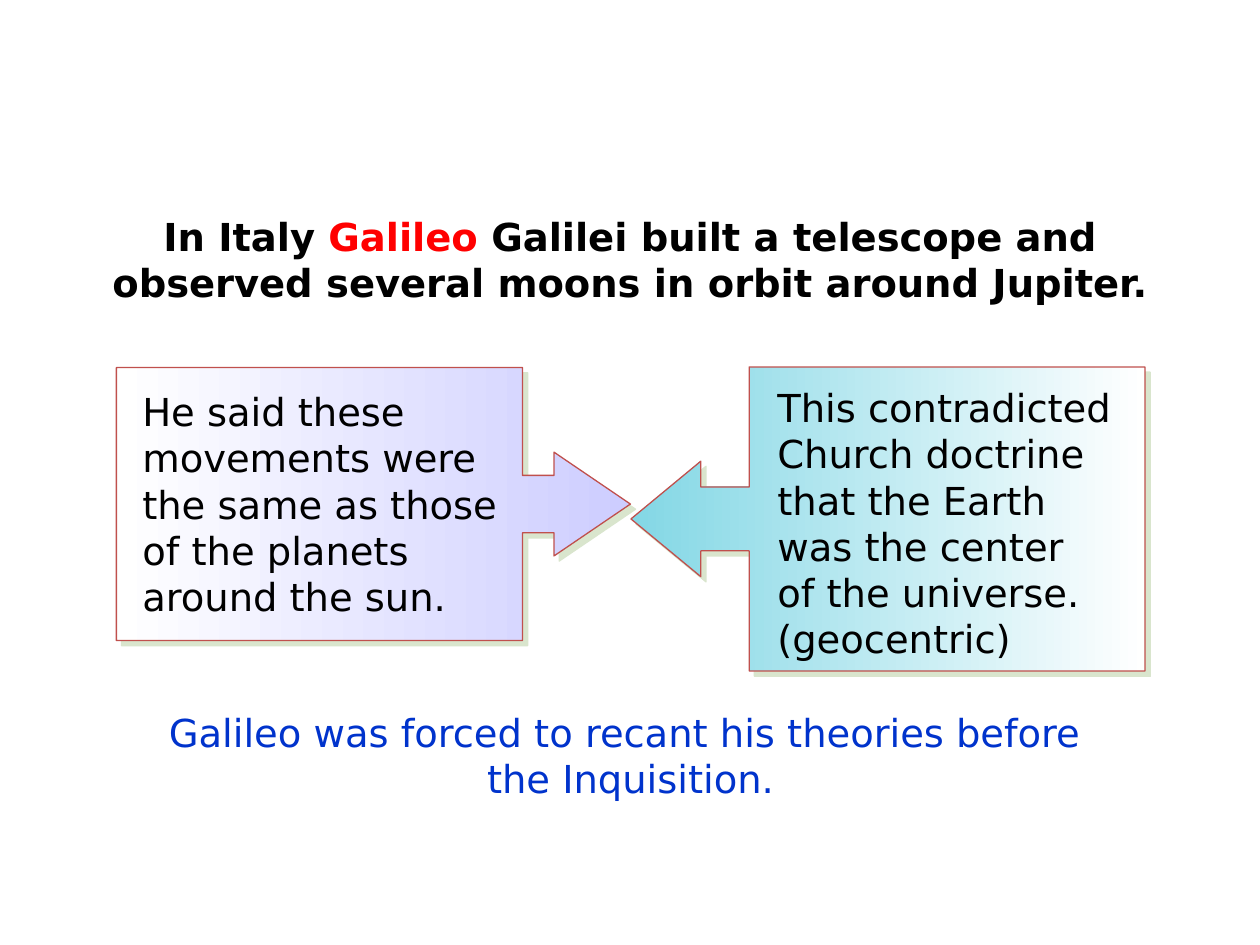
from dataclasses import dataclass

from lxml import etree
from pptx import Presentation
from pptx import util as u
from pptx.dml.color import RGBColor
from pptx.enum import shapes, text
from pptx.oxml.ns import qn

PX = 914400 / 126


@dataclass(frozen=True)
class Theme:
    font: str = "DejaVu Sans"
    size: int = 22
    ink: str = "000000"
    red: str = "FF0000"
    blue: str = "0033CC"
    edge: str = "C0504D"
    shade: str = "ADC793"
    lilac: str = "CDCDFF"
    teal: str = "83D7E5"
    pale: str = "FFFFFF"


@dataclass(frozen=True)
class Box:
    left: int
    top: int
    width: int
    height: int

    def emu(self) -> list[u.Emu]:
        return [px(n) for n in (self.left, self.top, self.width, self.height)]


@dataclass(frozen=True)
class Run:
    text: str
    color: str
    bold: bool = False


@dataclass(frozen=True)
class Arrow:
    box: Box
    turn: int
    color: str
    adjust: tuple[float, ...]
    note: Box
    lines: tuple[str, ...]


THEME = Theme()
ARROWS = (
    Arrow(Box(237, 247, 273, 514), 90, THEME.lilac, (0.21, 0.19, 0.28, 0.79),
          Box(130, 382, 406, 247),
          ("He said these movements were the same as those of the planets "
           "around the sun.",)),
    Arrow(Box(736, 262, 304, 514), 270, THEME.teal, (0.21, 0.19, 0.23, 0.77),
          Box(765, 378, 369, 326),
          ("This contradicted Church doctrine that the Earth was the center ",
           "of the universe. (geocentric)")),
)


def px(n: int) -> u.Emu:
    return u.Emu(round(n * PX))


def write(shape, lines: list[list[Run]], align) -> None:
    frame = shape.text_frame
    frame.word_wrap = True
    frame.auto_size = text.MSO_AUTO_SIZE.SHAPE_TO_FIT_TEXT
    frame.vertical_anchor = text.MSO_ANCHOR.TOP
    para = frame.paragraphs[0]
    para.alignment = align
    for row, line in enumerate(lines):
        if row:
            para.add_line_break()
        for item in line:
            run = para.add_run()
            run.text = item.text
            run.font.name = THEME.font
            run.font.size = u.Pt(THEME.size)
            run.font.bold = item.bold
            run.font.color.rgb = RGBColor.from_string(item.color)


def add_note(host, box: Box, lines: tuple[str, ...], color: str, align) -> None:
    note = host.add_textbox(*box.emu())
    write(note, [[Run(line, color)] for line in lines], align)


def add_shade(shape) -> None:
    shape.shadow.inherit = False
    effects = shape._element.spPr.find(qn("a:effectLst"))
    outer = etree.SubElement(effects, qn("a:outerShdw"), blurRad="0",
                             dist=str(u.Pt(4.2)), dir="2700000",
                             algn="ctr", rotWithShape="0")
    color = etree.SubElement(outer, qn("a:srgbClr"), val=THEME.shade)
    etree.SubElement(color, qn("a:alpha"), val="46000")


def add_arrow(host, arrow: Arrow) -> None:
    kind = shapes.MSO_SHAPE.UP_ARROW_CALLOUT
    shape = host.add_shape(kind, *arrow.box.emu())
    for i, value in enumerate(arrow.adjust):
        shape.adjustments[i] = value
    shape.rotation = arrow.turn
    shape._element.spPr.xfrm.set("flipH", "1")
    shape.fill.gradient()
    shape.fill.gradient_angle = 270
    for stop, color in zip(shape.fill.gradient_stops, (arrow.color, THEME.pale)):
        stop.color.rgb = RGBColor.from_string(color)
    shape.line.color.rgb = RGBColor.from_string(THEME.edge)
    shape.line.width = u.Pt(0.75)
    add_shade(shape)
    add_note(host, arrow.note, arrow.lines, THEME.ink, text.PP_ALIGN.LEFT)


def main() -> None:
    deck = Presentation()
    deck.slide_width, deck.slide_height = px(1260), px(945)
    slide = deck.slides.add_slide(deck.slide_layouts[5])

    title = slide.shapes.title
    title.left, title.top, title.width, title.height = Box(63, 207, 1134, 106).emu()
    write(title, [[
        Run("In Italy ", THEME.ink, True),
        Run("Galileo", THEME.red, True),
        Run(" Galilei built a telescope and observed several moons in orbit "
            "around Jupiter.", THEME.ink, True),
    ]], text.PP_ALIGN.CENTER)

    add_note(slide.shapes, Box(116, 703, 1029, 106),
             ("Galileo was forced to recant his theories before ",
              "the Inquisition."), THEME.blue, text.PP_ALIGN.CENTER)
    for arrow in ARROWS:
        add_arrow(slide.shapes.add_group_shape().shapes, arrow)

    deck.save("out.pptx")


if __name__ == "__main__":
    main()
